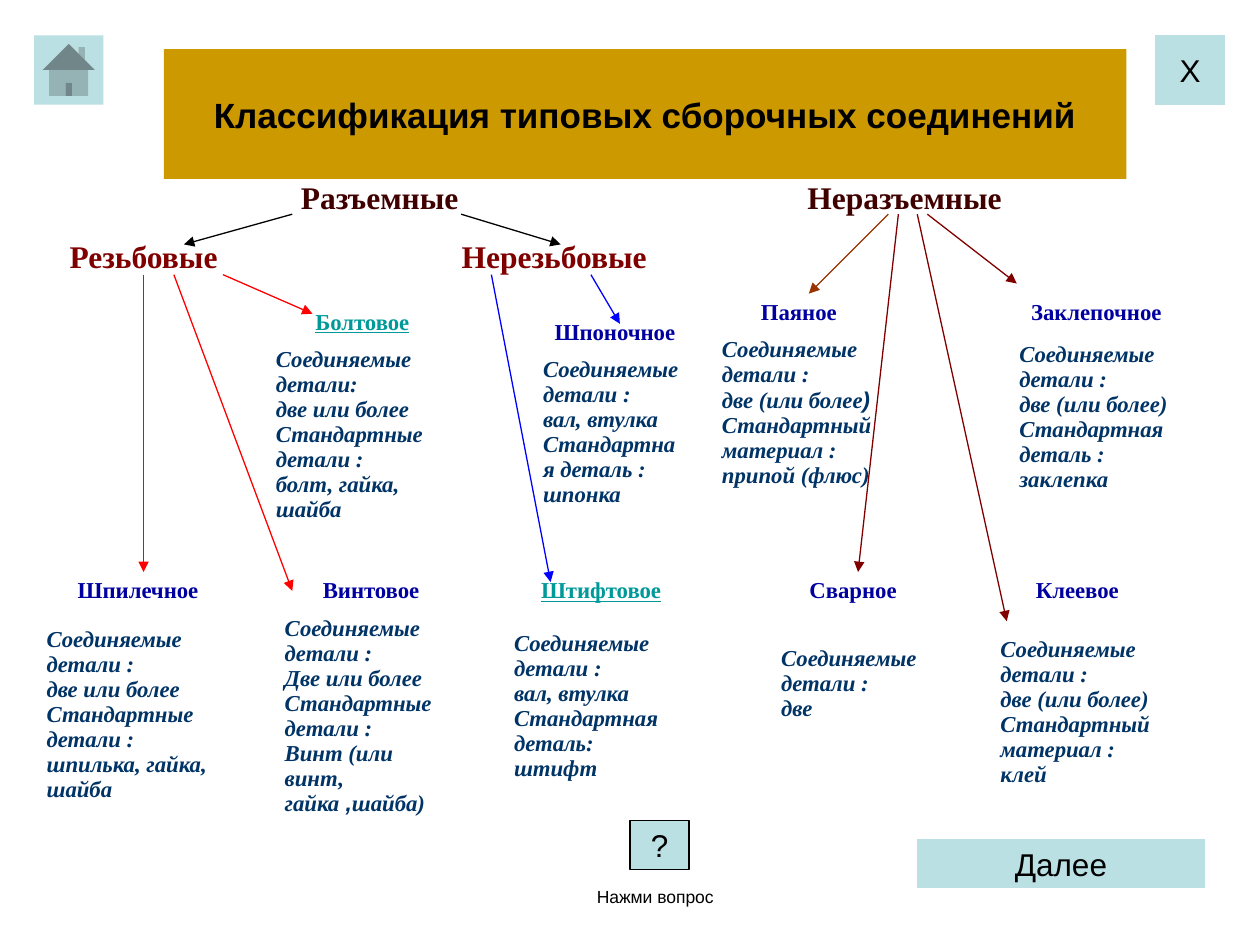
"""Build a slide that sorts typical assembly joints into a tree."""
from lxml.etree import SubElement
from pptx import Presentation
from pptx.dml.color import RGBColor
from pptx.enum.shapes import MSO_CONNECTOR, MSO_SHAPE
from pptx.enum.text import MSO_ANCHOR, PP_ALIGN
from pptx.oxml.ns import qn
from pptx.util import Inches, Pt

SERIF, SANS = "Times New Roman", "Arial"
BLACK, BROWN, MAROON = "000000", "400000", "800000"
NAVY, TEAL, INK = "0000A0", "009999", "003366"
RED, BLUE, RUST = "FF0000", "0000FF", "993300"
GOLD, PALE = "CC9900", "BBE0E3"
PLAIN = "{2D5ABB26-0587-4C30-8999-92F81FD0307C}"

TITLE = "Классификация типовых сборочных соединений"

GROUPS = [
    (1.2, 1.39, 0.63, BROWN, [3.69, 1.16, 2.26], ["Разъемные ", "", "Неразъемные"], 0.1),
    (0.43, 1.86, 0.55, MAROON, [1.42, 0.23, 3.23], ["Резьбовые", "", "Нерезьбовые"], 1.49),
]

PARTS, PART = "Соединяемые детали :", "Стандартная деталь :"
STOCK, STUFF = "Стандартные детали :", "Стандартный материал :"
JOINTS = [
    (2.09, 2.41, 1.57, [0.28, 1.45], "Болтовое", TEAL,
     ["Соединяемые детали:", "две или более", STOCK, "болт, гайка, шайба"]),
    (0.27, 4.54, 1.65, [0.39, 1.62], "Шпилечное", NAVY,
     [PARTS, "две или более", STOCK, "шпилька, гайка, шайба"]),
    (4.21, 2.49, 1.34, [0.29, 1.28], "Шпоночное", NAVY,
     [PARTS, "вал, втулка", PART, "шпонка"]),
    (2.16, 4.54, 1.57, [0.28, 1.45], "Винтовое", NAVY,
     [PARTS, "Две или более", STOCK, "Винт (или винт, гайка| ,|шайба)"]),
    (3.98, 4.54, 1.58, [0.42, 1.59], "Штифтовое", TEAL,
     [PARTS, "вал, втулка", "Стандартная деталь:", "штифт"]),
    (7.99, 2.33, 1.42, [0.34, 1.22], "Заклепочное", NAVY,
     [PARTS, "две (или более)", PART, "заклепка"]),
    (7.84, 4.54, 1.42, [0.47, 1.42], "Клеевое", NAVY,
     [PARTS, "две (или более)", STUFF, "клей"]),
    (5.63, 2.33, 1.42, [0.26, 0.97], "Паяное", NAVY,
     [PARTS, "две (или более|)", STUFF, "припой (флюс)"]),
    (6.1, 4.54, 1.34, [0.54, 1.27], "Сварное", NAVY, [PARTS, "две"]),
]

ARROWS = [
    (1.7, BLACK, [(2.32, 1.46, 1.94), (3.66, 4.45, 1.94)]),
    (1.7, RUST, [(7.05, 6.42, 2.33)]),
    (1.7, MAROON, [(7.36, 8.07, 2.25), (7.13, 6.81, 4.54), (7.28, 7.99, 4.93)]),
    (2.18, RED, [(1.77, 2.48, 2.49), (1.14, 1.14, 4.54), (1.38, 2.32, 4.69)]),
    (2.18, BLUE, [(3.9, 4.37, 4.62), (4.69, 4.92, 2.57)]),
]

BLANK = MSO_SHAPE.ACTION_BUTTON_CUSTOM
BUTTONS = [
    (MSO_SHAPE.ACTION_BUTTON_HOME, 0.27, 0.28, 0.55, 0.55, "", None),
    (BLANK, 9.17, 0.28, 0.55, 0.55, "Х", None),
    (BLANK, 7.28, 6.66, 2.28, 0.39, "Далее", None),
    (MSO_SHAPE.RECTANGLE, 5, 6.51, 0.47, 0.39, "?", BLACK),
]


def color(code):
    """Turn a hex string into a colour."""
    return RGBColor.from_string(code)


def style(para, face, size, code, bold=False, slant=False, under=False, align=PP_ALIGN.CENTER):
    """Format every run of a paragraph."""
    para.alignment = align
    for run in para.runs:
        font = run.font
        font.name, font.size, font.bold = face, Pt(size), bold
        font.italic, font.underline = slant, under
        font.color.rgb = color(code)


def add_grid(slide, left, top, cols, rows):
    """Add a bare table without fill or borders."""
    box = map(Inches, (left, top, sum(cols), sum(rows)))
    grid = slide.shapes.add_table(len(rows), len(cols), *box).table
    grid.first_row = grid.horz_banding = False
    grid._tbl.tblPr.find(qn("a:tableStyleId")).text = PLAIN
    for col, width in zip(grid.columns, cols):
        col.width = Inches(width)
    for row, height in zip(grid.rows, rows):
        row.height = Inches(height)
    for cell in grid.iter_cells():
        cell.fill.background()
    return grid


def add_group(slide, left, top, height, code, cols, names, inset):
    """Add one row of group names."""
    grid = add_grid(slide, left, top, cols, [height])
    for cell, name in zip(grid.iter_cells(), names):
        cell.text_frame.text = name
        style(cell.text_frame.paragraphs[0], SERIF, 18, code, bold=True)
    grid.cell(0, 2).margin_left = Inches(inset)


def add_joint(slide, left, top, width, rows, name, code, lines):
    """Add a joint name with its details; text between bars is sans."""
    grid = add_grid(slide, left, top, [width], rows)
    head, body = (cell.text_frame for cell in grid.iter_cells())
    head.text = name
    style(head.paragraphs[0], SERIF, 13, code, bold=True, under=code == TEAL)
    body.text = "\n".join(lines)
    for para, line in zip(body.paragraphs, lines):
        bits = line.split("|")
        para.text = bits[0]
        for bit in bits[1:]:
            para.add_run().text = bit
        style(para, SERIF, 13, INK, bold=True, slant=True, align=PP_ALIGN.LEFT)
        for run in para.runs[1::2]:
            run.font.name = SANS


def add_arrow(slide, start, end, code):
    """Add a thin line with a triangle at its end."""
    line = slide.shapes.add_connector(MSO_CONNECTOR.STRAIGHT, *map(Inches, start + end))
    line.line.color.rgb = color(code)
    line.line.width = Pt(0.75)
    SubElement(line.line._get_or_add_ln(), qn("a:tailEnd"), type="triangle")
    SubElement(line._element.spPr, qn("a:effectLst"))


def add_box(slide, kind, left, top, width, height, text, fill, edge=None, size=18, bold=False):
    """Add a filled shape with centred text."""
    box = slide.shapes.add_shape(kind, *map(Inches, (left, top, width, height)))
    box.shadow.inherit = False
    box.fill.solid()
    box.fill.fore_color.rgb = color(fill)
    if edge:
        box.line.color.rgb = color(edge)
        box.line.width = Pt(0.75)
    else:
        box.line.fill.background()
    if text:
        frame = box.text_frame
        frame.text = text
        frame.word_wrap = bold
        frame.vertical_anchor = MSO_ANCHOR.MIDDLE
        style(frame.paragraphs[0], SANS, size, BLACK, bold)


def main():
    """Build and save the slide."""
    deck = Presentation()
    deck.slide_width, deck.slide_height = Inches(10), Inches(7.5)
    slide = deck.slides.add_slide(deck.slide_layouts[6])
    add_box(slide, MSO_SHAPE.RECTANGLE, 1.3, 0.39, 7.64, 1.03, TITLE, GOLD, size=20, bold=True)
    for group in GROUPS:
        add_group(slide, *group)
    for joint in JOINTS:
        add_joint(slide, *joint)
    for top, code, ends in ARROWS:
        for left, right, low in ends:
            add_arrow(slide, (left, top), (right, low), code)
    for *place, text, edge in BUTTONS:
        add_box(slide, *place, text, PALE, edge)
    hint = slide.shapes.add_textbox(*map(Inches, (4.53, 6.98, 1.34, 0.27))).text_frame
    hint.word_wrap = True
    hint.text = "Нажми вопрос"
    style(hint.paragraphs[0], SANS, 10, BLACK)
    deck.save("out.pptx")


if __name__ == "__main__":
    main()
